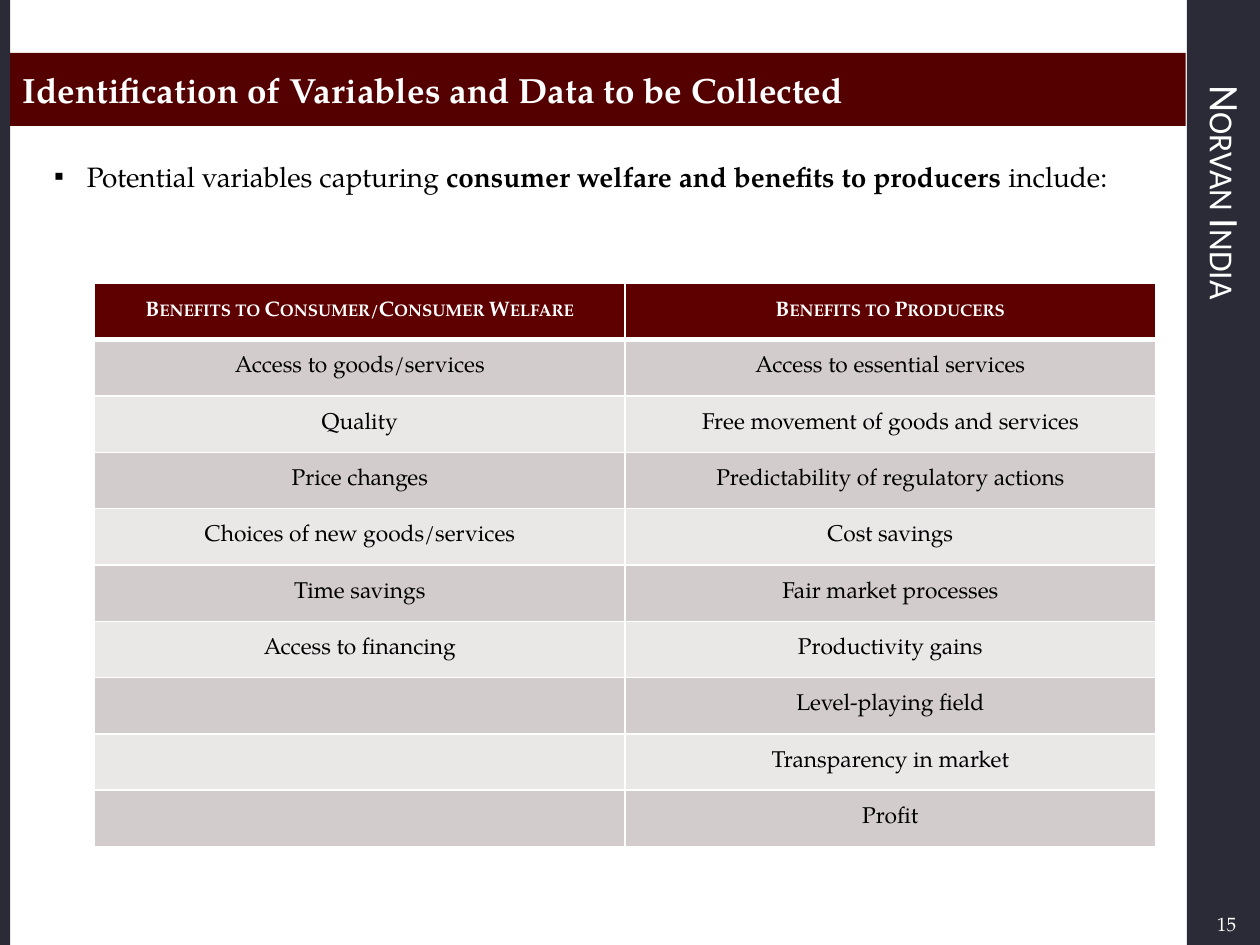
from lxml import etree
from pptx import Presentation
from pptx.dml.color import RGBColor
from pptx.enum.shapes import MSO_SHAPE
from pptx.enum.text import MSO_ANCHOR, MSO_AUTO_SIZE, PP_ALIGN
from pptx.oxml.ns import qn
from pptx.util import Inches, Pt

RECTANGLE = MSO_SHAPE.RECTANGLE
MIDDLE, TOP = MSO_ANCHOR.MIDDLE, MSO_ANCHOR.TOP
LEFT, CENTER, RIGHT, JUSTIFY = PP_ALIGN.LEFT, PP_ALIGN.CENTER, PP_ALIGN.RIGHT, PP_ALIGN.JUSTIFY
NO_AUTOFIT = MSO_AUTO_SIZE.NONE

SERIF, SANS = "TeX Gyre Pagella", "Calibri"
WHITE = RGBColor(0xFF, 0xFF, 0xFF)
BLACK = RGBColor(0, 0, 0)
NAVY = RGBColor(0x2B, 0x2B, 0x37)
MAROON = RGBColor(0x54, 0, 0)
HEADER_RED = RGBColor(0x5F, 0, 0)
BANDS = (RGBColor(0xD2, 0xCC, 0xCC), RGBColor(0xEA, 0xE7, 0xE7))

TITLE = "Identification of Variables and Data to be Collected"
LEAD = [
    ("Potential variables capturing ", False),
    ("consumer welfare and benefits to producers", True),
    (" include:", False),
]
BENEFITS = [
    ("Benefits to Consumer/Consumer Welfare", "Benefits to Producers"),
    ("Access to goods/services", "Access to essential services"),
    ("Quality", "Free movement of goods and services"),
    ("Price changes", "Predictability of regulatory actions"),
    ("Choices of new goods/services", "Cost savings"),
    ("Time savings", "Fair market processes"),
    ("Access to financing", "Productivity gains"),
    ("", "Level-playing field"),
    ("", "Transparency in market"),
    ("", "Profit"),
]
FIRM = "Norvan India"
PAGE_NUMBER = "15"
SIDE_BANDS = [(9.42, 0.58), (0, 0.08)]
TABLE_BOX = (0.75, 2.25, 8.42, 4.47)


def place(shape, left, top, width, height):
    shape.left, shape.top = Inches(left), Inches(top)
    shape.width, shape.height = Inches(width), Inches(height)


def style(paragraph, size, color, align, bold=False, font=SERIF):
    paragraph.alignment = align
    paragraph.space_before = Pt(0)
    paragraph.font.name = font
    paragraph.font.size = Pt(size)
    paragraph.font.bold = bold
    paragraph.font.color.rgb = color


def small_caps(paragraph):
    for run in paragraph.runs:
        run._r.get_or_add_rPr().set("cap", "small")


def prepare(frame, anchor):
    frame.word_wrap = True
    frame.auto_size = NO_AUTOFIT
    frame.vertical_anchor = anchor
    return frame.paragraphs[0]


def add_label(slide, text, box, size, align, font):
    label = slide.shapes.add_textbox(*map(Inches, box))
    paragraph = prepare(label.text_frame, MIDDLE)
    paragraph.text = text
    style(paragraph, size, WHITE, align, font=font)
    return label.text_frame


def add_bullet(paragraph, symbol, indent):
    properties = paragraph._p.get_or_add_pPr()
    properties.set("marL", str(Inches(indent)))
    properties.set("indent", str(-Inches(indent)))
    etree.SubElement(properties, qn("a:buFont"), typeface="Arial")
    etree.SubElement(properties, qn("a:buChar"), char=symbol)


def add_borders(cell, top, bottom):
    properties = cell._tc.get_or_add_tcPr()
    for side, width in (("L", 1), ("R", 1), ("T", top), ("B", bottom)):
        line = etree.SubElement(properties, qn(f"a:ln{side}"), w=str(Pt(width)))
        fill = etree.SubElement(line, qn("a:solidFill"))
        etree.SubElement(fill, qn("a:srgbClr"), val=str(WHITE))


def add_benefits(slide):
    row_count, column_count = len(BENEFITS), len(BENEFITS[0])
    table = slide.shapes.add_table(row_count, column_count, *map(Inches, TABLE_BOX)).table
    for row_index, row in enumerate(BENEFITS):
        header = row_index == 0
        for column_index, text in enumerate(row):
            cell = table.cell(row_index, column_index)
            add_borders(cell, 3 if row_index == 1 else 1, 3 if header else 1)
            cell.fill.solid()
            cell.fill.fore_color.rgb = HEADER_RED if header else BANDS[(row_index - 1) % 2]
            cell.vertical_anchor = MIDDLE
            paragraph = cell.text_frame.paragraphs[0]
            paragraph.text = text
            if header:
                style(paragraph, 12, WHITE, CENTER, bold=True)
                small_caps(paragraph)
            else:
                style(paragraph, 13, BLACK, CENTER)


def main():
    deck = Presentation()
    deck.slide_width, deck.slide_height = Inches(10), Inches(7.5)
    slide = deck.slides.add_slide(deck.slide_layouts[1])

    for left, width in SIDE_BANDS:
        band = slide.shapes.add_shape(RECTANGLE, Inches(left), 0, Inches(width), deck.slide_height)
        band.shadow.inherit = False
        band.fill.solid()
        band.fill.fore_color.rgb = NAVY
        band.line.fill.background()

    add_label(slide, PAGE_NUMBER, (8.83, 7.17, 1.08, 0.33), 11, RIGHT, SERIF)
    firm_frame = add_label(slide, FIRM, (9.42, 0.58, 0.58, 6.42), 24, LEFT, SANS)
    firm_frame._txBody.bodyPr.set("vert", "vert")
    firm_frame.paragraphs[0].line_spacing = 0.9
    small_caps(firm_frame.paragraphs[0])

    title = slide.shapes.title
    place(title, 0.08, 0.42, 9.33, 0.58)
    title.fill.solid()
    title.fill.fore_color.rgb = MAROON
    heading = prepare(title.text_frame, MIDDLE)
    heading.text = TITLE
    style(heading, 20, WHITE, LEFT, bold=True)

    body = slide.placeholders[1]
    place(body, 0.33, 1.08, 8.83, 5.92)
    lead = prepare(body.text_frame, TOP)
    lead.line_spacing = 1.5
    lead.space_before = Pt(0)
    add_bullet(lead, "▪", 0.26)
    style(lead, 16, BLACK, JUSTIFY)
    for text, bold in LEAD:
        run = lead.add_run()
        run.text = text
        run.font.bold = bold

    add_benefits(slide)
    deck.save("out.pptx")


if __name__ == "__main__":
    main()
